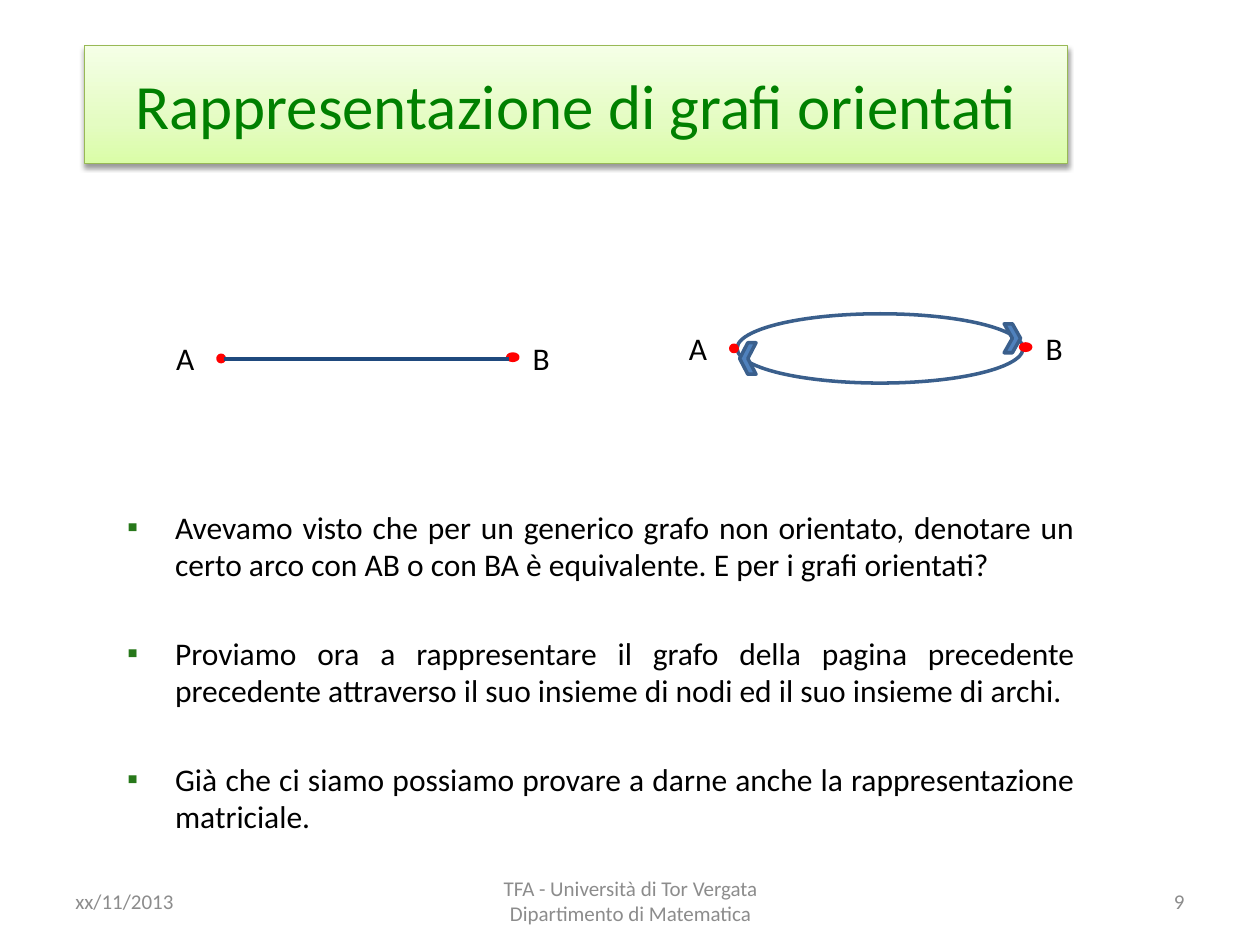
from copy import deepcopy
from lxml import etree
from pptx import Presentation
from pptx.dml.color import RGBColor
from pptx.enum.shapes import MSO_CONNECTOR, MSO_SHAPE
from pptx.enum.text import MSO_ANCHOR, MSO_AUTO_SIZE, PP_ALIGN
from pptx.oxml import parse_xml
from pptx.oxml.ns import nsdecls, qn
from pptx.util import Inches, Pt

OVAL, CHEVRON = MSO_SHAPE.OVAL, MSO_SHAPE.CHEVRON
STRAIGHT = MSO_CONNECTOR.STRAIGHT
LEFT, CENTER, RIGHT, JUSTIFY = (
    PP_ALIGN.LEFT, PP_ALIGN.CENTER, PP_ALIGN.RIGHT, PP_ALIGN.JUSTIFY)
TOP, MIDDLE = MSO_ANCHOR.TOP, MSO_ANCHOR.MIDDLE
NONE = MSO_AUTO_SIZE.NONE

GREEN = RGBColor(0x00, 0x80, 0x00)
EDGE = RGBColor(0x98, 0xB9, 0x55)
PALE = RGBColor(0xF5, 0xFF, 0xE7)
LIGHT = RGBColor(0xE4, 0xFC, 0xC2)
LIME = RGBColor(0xDA, 0xFD, 0xA7)
GRAY = RGBColor(0x8C, 0x8C, 0x8C)
BLACK = RGBColor(0x00, 0x00, 0x00)
RED = RGBColor(0xFF, 0x00, 0x00)
BLUE = RGBColor(0x4F, 0x81, 0xBD)
STEEL = RGBColor(0x3A, 0x5F, 0x8C)
NAVY = RGBColor(0x1F, 0x49, 0x7D)
MARK = RGBColor(0x27, 0x78, 0x1A)

SHADOW = (
    f'<a:effectLst {nsdecls("a")}><a:outerShdw blurRad="39370" dist="20320" '
    'dir="5400000" rotWithShape="0"><a:srgbClr val="000000">'
    '<a:alpha val="38000"/></a:srgbClr></a:outerShdw></a:effectLst>')

POINTS = [
    "Avevamo visto che per un generico grafo non orientato, denotare un certo "
    "arco con AB o con BA è equivalente. E per i grafi orientati?",
    "Proviamo ora a rappresentare il grafo della pagina precedente precedente "
    "attraverso il suo insieme di nodi ed il suo insieme di archi.",
    "Già che ci siamo possiamo provare a darne anche la rappresentazione "
    "matriciale.",
]


class Deck:
    """Holds the style and the current slide, and draws each kind of element."""

    def __init__(self):
        self.face = "Calibri"
        self.width = Pt(2)
        self.show = Presentation()
        self.show.slide_width, self.show.slide_height = Inches(10), Inches(7.5)
        self.slide = self.show.slides.add_slide(self.show.slide_layouts[1])

    def place(self, shape, box):
        for name, size in zip(("left", "top", "width", "height"), box):
            setattr(shape, name, Inches(size))

    def style(self, para, size, color, align):
        para.alignment = align
        for run in para.runs:
            form = {"name": self.face, "size": Pt(size)}
            for name, value in form.items():
                setattr(run.font, name, value)
            run.font.color.rgb = color

    def title(self, text, box):
        shape = self.slide.shapes.title
        self.place(shape, box)
        shape.text_frame.text = text
        shape.text_frame.auto_size = NONE
        self.style(shape.text_frame.paragraphs[0], 36, GREEN, CENTER)
        shape.fill.gradient()
        shape.fill.gradient_angle = 90
        first = shape.fill.gradient_stops
        stops = shape._element.spPr.find(".//" + qn("a:gsLst"))
        stops.insert(1, deepcopy(stops[0]))
        first = shape.fill.gradient_stops
        for stop, (spot, color) in zip(
                first, ((0, LIME), (0.35, LIGHT), (1, PALE))):
            stop.position = spot
            stop.color.rgb = color
        shape.line.color.rgb = EDGE
        shape.line.width = Pt(0.75)
        shape._element.spPr.append(parse_xml(SHADOW))

    def bullet(self, para):
        props = para._p.get_or_add_pPr()
        props.set("marL", str(Inches(0.38)))
        props.set("indent", str(-Inches(0.38)))
        tint = etree.SubElement(props, qn("a:buClr"))
        etree.SubElement(tint, qn("a:srgbClr"), val=str(MARK))
        etree.SubElement(props, qn("a:buFont"), typeface="Arial")
        etree.SubElement(props, qn("a:buChar"), char="▪")

    def body(self, items, box):
        shape = self.slide.placeholders[1]
        self.place(shape, box)
        frame = shape.text_frame
        frame.auto_size = NONE
        frame.text = "\n".join(items)
        for i, para in enumerate(frame.paragraphs):
            self.bullet(para)
            para.line_spacing = Pt(21)
            para.space_before = Pt(30 if i else 0)
            self.style(para, 18, BLACK, JUSTIFY)

    def text(self, text, box, size=18, color=BLACK, align=LEFT, anchor=TOP):
        shape = self.slide.shapes.add_textbox(*map(Inches, box))
        frame = shape.text_frame
        form = {"word_wrap": True, "vertical_anchor": anchor}
        for name, value in form.items():
            setattr(frame, name, value)
        para = frame.paragraphs[0]
        para.text = text
        self.style(para, size, color, align)

    def shape(self, kind, box, line, fill=None, turn=0):
        shape = self.slide.shapes.add_shape(kind, *map(Inches, box))
        shape.shadow.inherit = False
        shape.rotation = turn
        if fill is None:
            shape.fill.background()
        else:
            shape.fill.solid()
            shape.fill.fore_color.rgb = fill
        shape.line.color.rgb = line
        shape.line.width = self.width

    def nodes(self, left, top):
        for name, step in (("A", 0), ("B", 2.83)):
            self.text(name, (left + step, top, 0.34, 0.4))
        self.shape(OVAL, (left + 0.43, top + 0.18, 0.05, 0.05), RED, RED)
        self.shape(OVAL, (left + 2.73, top + 0.17, 0.08, 0.05), RED, RED)

    def line(self, start, end):
        line = self.slide.shapes.add_connector(
            STRAIGHT, *map(Inches, start + end))
        line.line.color.rgb = NAVY
        line.line.width = self.width
        etree.SubElement(line._element.spPr, qn("a:effectLst"))


def main():
    deck = Deck()
    deck.title("Rappresentazione di grafi orientati", (0.67, 0.36, 7.8, 0.94))
    deck.body(POINTS, (0.91, 3.99, 7.72, 2.05))
    for text, left, width, align in (
            ("xx/11/2013", 0.5, 2.33, LEFT),
            ("TFA - Università di Tor Vergata\vDipartimento di Matematica",
             3.42, 3.17, CENTER),
            ("9", 7.17, 2.33, RIGHT)):
        deck.text(text, (left, 6.95, width, 0.4), 12, GRAY, align, MIDDLE)
    deck.shape(OVAL, (5.85, 2.49, 2.27, 0.55), STEEL)
    deck.shape(CHEVRON, (7.97, 2.57, 0.13, 0.23), STEEL, BLUE)
    deck.shape(CHEVRON, (5.87, 2.72, 0.13, 0.25), STEEL, BLUE, 180)
    deck.nodes(5.37, 2.56)
    deck.nodes(1.3, 2.64)
    deck.line((1.78, 2.85), (4.04, 2.85))
    deck.show.save("out.pptx")


if __name__ == "__main__":
    main()
